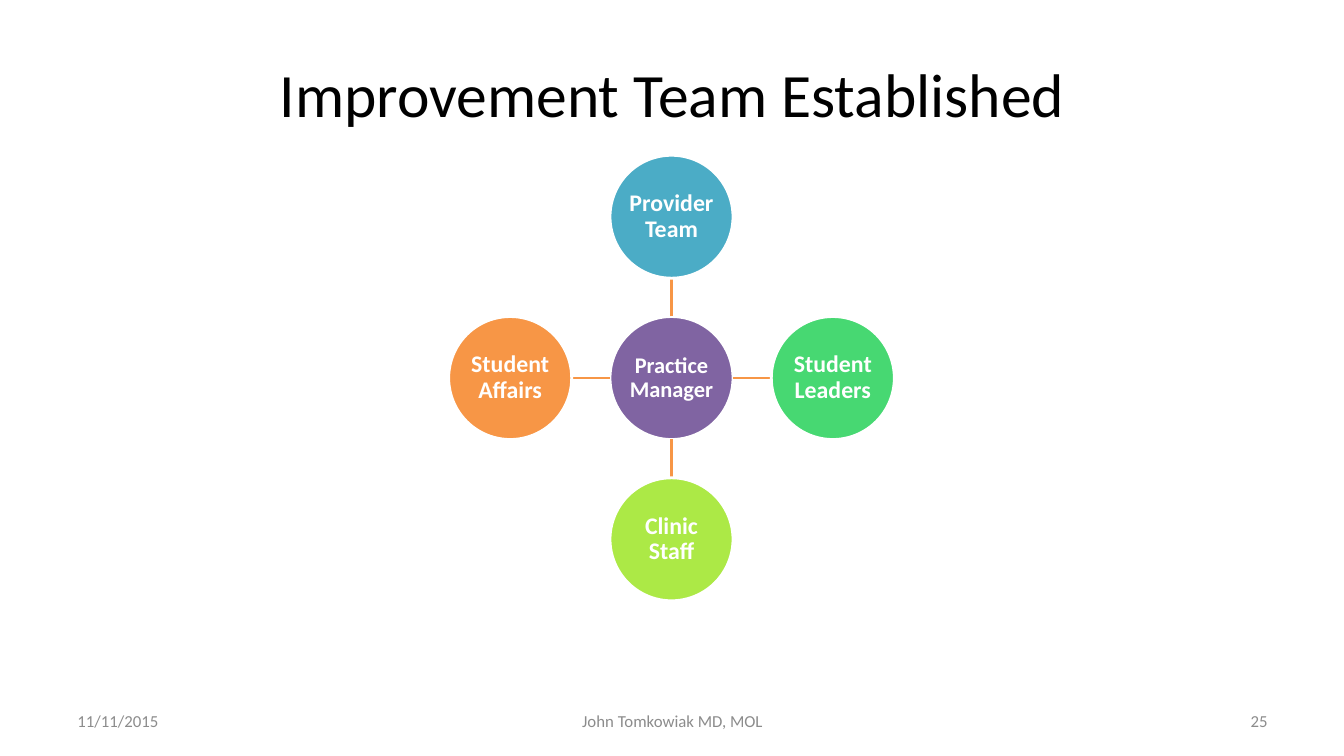
from pptx import Presentation
from pptx.dml.color import RGBColor as Rgb
from pptx.enum.shapes import MSO_CONNECTOR as Link, MSO_SHAPE as Shape
from pptx.enum.text import MSO_ANCHOR as Anchor, PP_ALIGN as Align
from pptx.oxml.ns import qn
from pptx.util import Inches, Pt
from lxml.etree import SubElement

MID_X, MID_Y = 6.66, 3.75
STEP, SIZE = 1.6, 1.22
RAD = SIZE / 2
HUB = ("Practice Manager", "8064A2")
TEAMS = [
    ("Provider Team", "4BACC6", 0, -1),
    ("Student Leaders", "47D872", 1, 0),
    ("Clinic Staff", "ACE946", 0, 1),
    ("Student Affairs", "F79646", -1, 0),
]
FOOTER = [
    ("11/11/2015", 0.67, 3.11, Align.LEFT),
    ("John Tomkowiak MD, MOL", 4.56, 4.22, Align.CENTER),
    ("25", 9.56, 3.11, Align.RIGHT),
]


def color(hue):
    return Rgb.from_string(hue)


def apply(item, form):
    for key, value in form.items():
        setattr(item, key, value)


def write(shape, text, size, hue, align=Align.CENTER, bold=False, space=1.0, inset=None):
    frame = shape.text_frame
    apply(frame, {"word_wrap": True, "vertical_anchor": Anchor.MIDDLE})
    if inset is not None:
        sides = ("left", "top", "right", "bottom")
        apply(frame, {f"margin_{side}": Inches(inset) for side in sides})
    para = frame.paragraphs[0]
    apply(para, {"alignment": align, "line_spacing": space})
    run = para.add_run()
    run.text = text
    apply(run.font, {"name": "Calibri", "size": Pt(size), "bold": bold})
    run.font.color.rgb = color(hue)


def stroke(shape, hue):
    shape.line.color.rgb = color(hue)
    shape.line.width = Pt(2)


def label(slide, text, box, size, hue, align=Align.CENTER):
    shape = slide.shapes.add_textbox(*map(Inches, box))
    write(shape, text, size, hue, align)


def circle(slide, text, hue, x, y, size=17):
    box = (x - RAD, y - RAD, SIZE, SIZE)
    shape = slide.shapes.add_shape(Shape.OVAL, *map(Inches, box))
    shape.shadow.inherit = False
    shape.fill.solid()
    shape.fill.fore_color.rgb = color(hue)
    stroke(shape, "FFFFFF")
    write(shape, text, size, "FFFFFF", bold=True, space=0.9, inset=0.01)


def spoke(slide, dx, dy):
    ends = [
        Inches(mid + way * gap)
        for gap in (RAD, STEP - RAD)
        for mid, way in ((MID_X, dx), (MID_Y, dy))
    ]
    line = slide.shapes.add_connector(Link.STRAIGHT, *ends)
    stroke(line, "F79646")
    SubElement(line.element.spPr, qn("a:effectLst"))


def main():
    deck = Presentation()
    apply(deck, {"slide_width": Inches(13.33), "slide_height": Inches(7.5)})
    slide = deck.slides.add_slide(deck.slide_layouts[6])
    label(slide, "Improvement Team Established", (0.67, 0.3, 12, 1.25), 44, "000000")
    for text, left, width, align in FOOTER:
        label(slide, text, (left, 6.95, width, 0.4), 12, "8C8C8C", align)
    circle(slide, *HUB, MID_X, MID_Y, 16)
    for text, hue, dx, dy in TEAMS:
        spoke(slide, dx, dy)
        circle(slide, text, hue, MID_X + dx * STEP, MID_Y + dy * STEP)
    deck.save("out.pptx")


if __name__ == "__main__":
    main()
